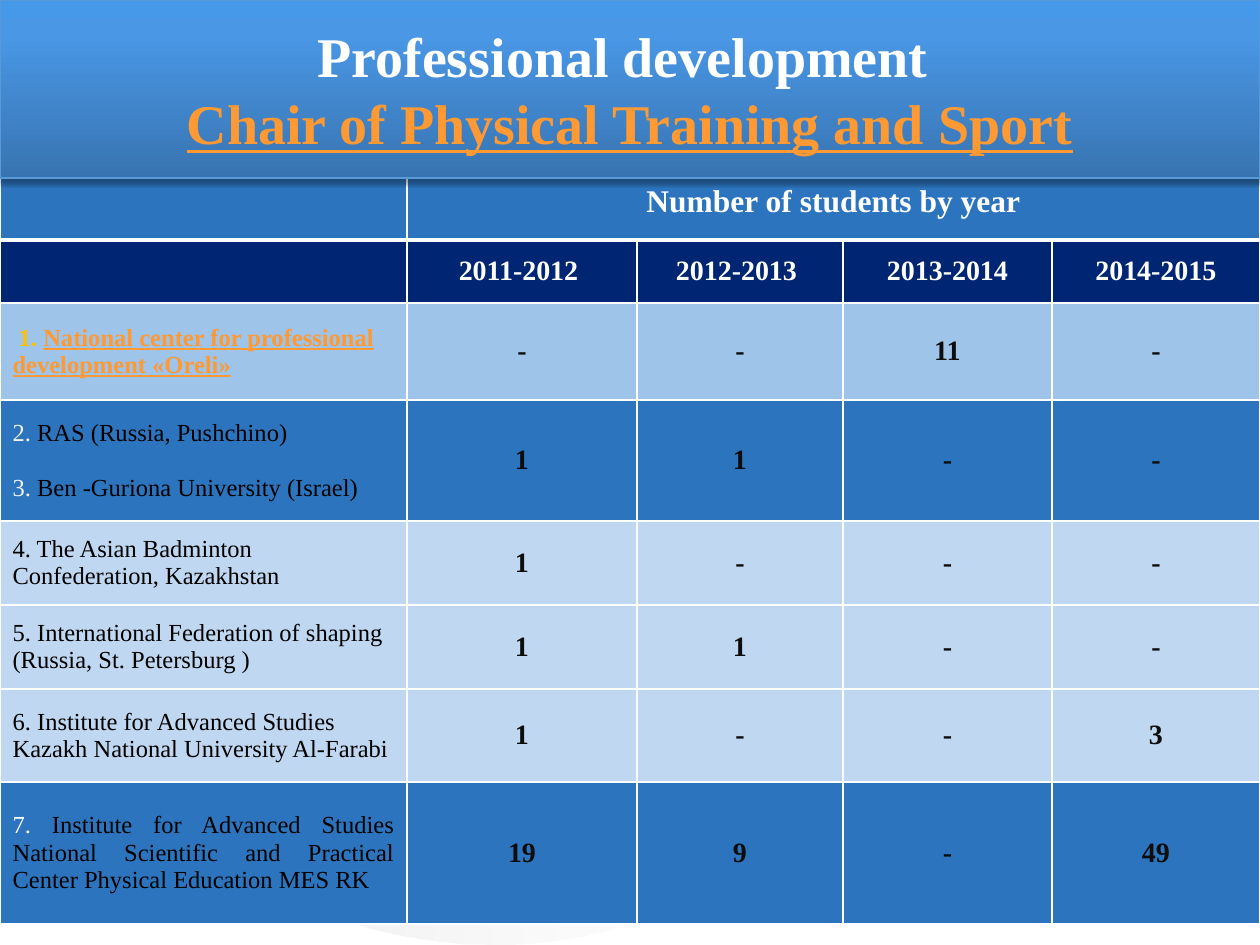
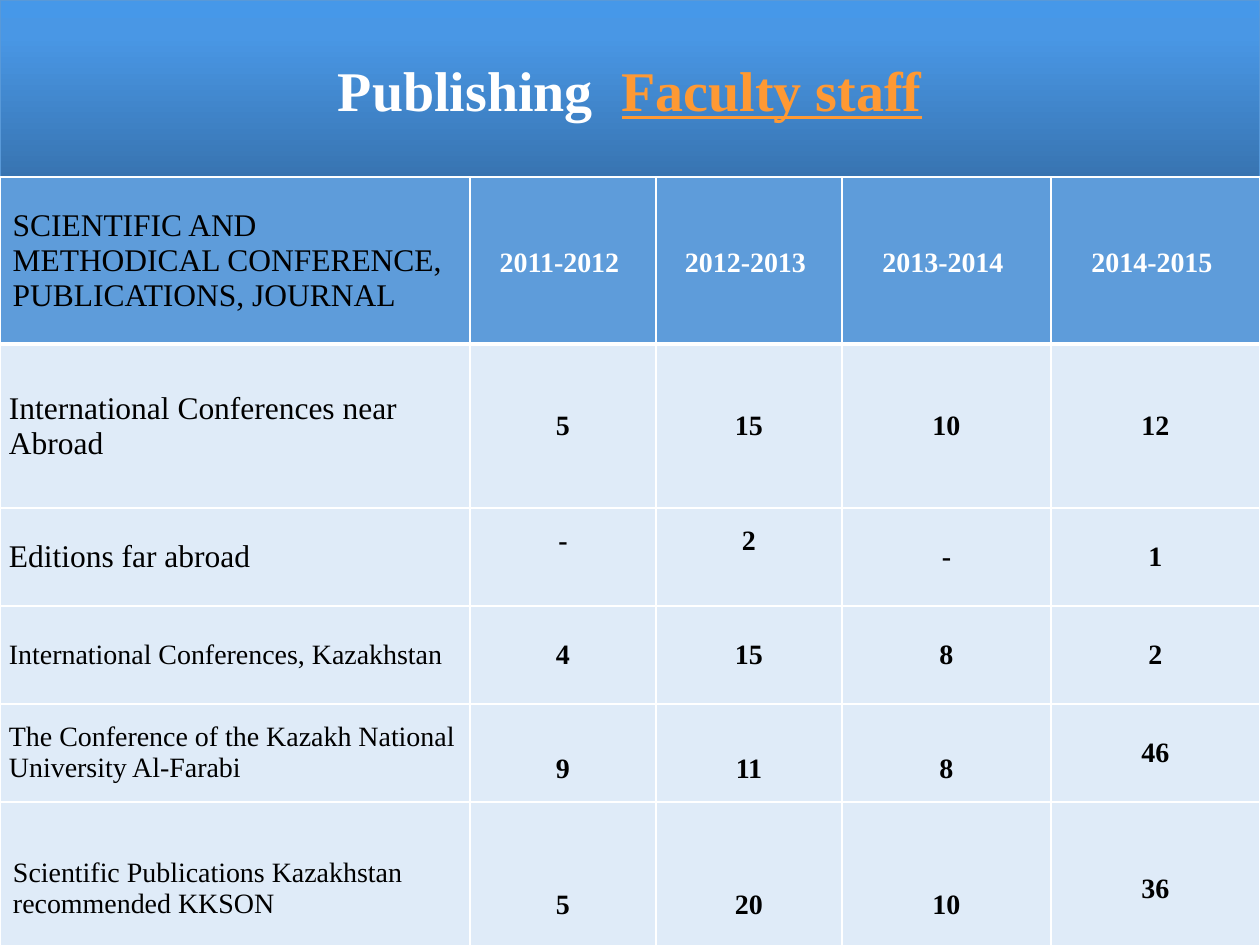
from lxml.etree import SubElement
from pptx import Presentation
from pptx.dml.color import RGBColor
from pptx.enum.shapes import MSO_SHAPE as Shape
from pptx.enum.text import MSO_ANCHOR as Anchor, PP_ALIGN as Align
from pptx.oxml import parse_xml
from pptx.oxml.ns import nsdecls, qn
from pptx.util import Pt

PX = 7257
FONT = "Times New Roman"
WIDTH, HEIGHT, BAND_HEIGHT = 1260, 945, 178
COLORS = {
    "white": "FFFFFF", "black": "000000", "ink": "0D0D0D", "pale": "F2F2F2",
    "orange": "FF9933", "gold": "FFC000", "grey": "C0C0C0",
    "navy": "002673", "blue": "2C75BE", "sky": "9EC4E9", "ice": "BFD7F0",
    "heading": "5E9CDA", "mist": "DFEBF8", "edge": "5999D8",
    "band_low": "3874B1", "band_mid": "4997E5", "band_top": "4698E9",
}

YEARS = ["2011-2012 ", "2012-2013 ", "2013-2014", "2014-2015"]
COURSES = [
    (97, "sky", [[(" 1. ", "gold", True, False),
                  ("National center for professional development «Oreli»", "orange", True, True)]],
     ["-", "-", "11", "-"]),
    (121, "blue", [[("2. ", "pale"), ("RAS (Russia, Pushchino)", "black")],
                   [("3. ", "pale"), ("Ben -Guriona University (Israel)", "black")]],
     ["1", "1", "-", "-"]),
    (84, "ice", [[("4. The Asian Badminton Confederation, Kazakhstan", "black")]],
     ["1", "-", "-", "-"]),
    (84, "ice", [[("5. International Federation of shaping (Russia, St. Petersburg )", "black")]],
     ["1", "1", "-", "-"]),
    (93, "ice", [[("6. Institute for Advanced Studies Kazakh National University Al-Farabi", "black")]],
     ["1", "-", "-", "3"]),
    (142, "blue", [[("7. ", "white"),
                    ("Institute for Advanced Studies National Scientific and Practical "
                     "Center Physical Education MES RK", "black")]],
     ["19", "9", "-", "49"]),
]

PUBLICATIONS = [
    (164, "International Conferences near Abroad", 18, 9, ["5", "15", "10", "12"], [0, 0, 0, 0]),
    (98, "Editions far abroad", 18, 9, ["-", "2", "-", "1"], [-32, -32, 0, 0]),
    (98, "International Conferences, Kazakhstan", 16, 9, ["4", "15", "8", "2"], [0, 0, 0, 0]),
    (98, "The Conference of the Kazakh National University Al-Farabi", 16, 9,
     ["9", "11", "8", "46"], [32, 32, 32, 0]),
    (174, "Scientific Publications Kazakhstan recommended KKSON", 16, 13,
     ["5", "20", "10", "36"], [32, 32, 32, 0]),
]


def px(*lengths):
    return [length * PX for length in lengths]


def rgb(name):
    return RGBColor.from_string(COLORS[name])


def write(frame, paragraphs, size, align=Align.LEFT, gap=0, spacing=None):
    frame.word_wrap = True
    for index, pieces in enumerate(paragraphs):
        paragraph = frame.paragraphs[0] if index == 0 else frame.add_paragraph()
        paragraph.alignment = align
        if spacing:
            paragraph.line_spacing = spacing
        if index and gap:
            paragraph.space_before = Pt(gap)
        for words, color, *style in pieces:
            bold, underline = style or (False, False)
            run = paragraph.add_run()
            run.text = words
            font = run.font
            font.name, font.size = FONT, Pt(size)
            font.bold, font.underline = bold, underline
            font.color.rgb = rgb(color)


def fill_gradient(shape, stops, angle):
    marks = "".join(
        f'<a:gs pos="{place * 1000}"><a:srgbClr val="{COLORS[color]}">'
        f'<a:alpha val="{opacity * 1000}"/></a:srgbClr></a:gs>'
        for place, color, opacity in stops)
    shape._element.spPr.insert(2, parse_xml(
        f'<a:gradFill {nsdecls("a")} rotWithShape="1"><a:gsLst>{marks}</a:gsLst>'
        f'<a:lin ang="{angle * 60000}" scaled="0"/></a:gradFill>'))


def add_glow(slide, left, top, width, height):
    glow = slide.shapes.add_shape(Shape.OVAL, *px(left, top, width, height))
    glow.shadow.inherit = False
    glow.line.fill.background()
    fill_gradient(glow, [(0, "grey", 44), (100, "white", 0)], 0)


def add_title_band(slide, lines):
    band = slide.shapes.add_shape(Shape.RECTANGLE, *px(0, 0, WIDTH, BAND_HEIGHT))
    band.line.color.rgb = rgb("edge")
    band.line.width = Pt(0.75)
    band.shadow.inherit = False
    fill_gradient(band, [(0, "band_low", 100), (80, "band_mid", 100), (100, "band_top", 100)], 270)
    effects = band._element.spPr.find(qn("a:effectLst"))
    effects.append(parse_xml(
        f'<a:outerShdw {nsdecls("a")} blurRad="{Pt(3.1)}" dist="{Pt(1.8)}" dir="5400000" '
        f'rotWithShape="0"><a:srgbClr val="{COLORS["black"]}"><a:alpha val="35000"/>'
        '</a:srgbClr></a:outerShdw>'))
    band.text_frame.vertical_anchor = Anchor.MIDDLE
    write(band.text_frame, lines, 32, Align.CENTER)


def style_cell(cell, color, row):
    cell.fill.solid()
    cell.fill.fore_color.rgb = rgb(color)
    cell.vertical_anchor = Anchor.MIDDLE
    properties = cell._tc.get_or_add_tcPr()
    for position, side in enumerate("LRTB"):
        thick = (side, row) in (("B", 0), ("T", 1))
        border = SubElement(properties, qn(f"a:ln{side}"), w=str(Pt(3 if thick else 1)))
        paint = SubElement(border, qn("a:solidFill"))
        SubElement(paint, qn("a:srgbClr"), val=COLORS["white"])
        properties.insert(position, border)


def add_grid(slide, top, widths, heights, fills):
    frame = slide.shapes.add_table(len(heights), len(widths),
                                   *px(0, top, sum(widths), sum(heights)))
    grid = frame.table
    grid.first_row = grid.horz_banding = False
    for column, width in zip(grid.columns, widths):
        column.width = width * PX
    for index, (row, height, color) in enumerate(zip(grid.rows, heights, fills)):
        row.height = height * PX
        for cell in row.cells:
            style_cell(cell, color, index)
    return grid


def fill_values(grid, row, values, color, shifts=(0, 0, 0, 0), spacing=None):
    for column, (value, shift) in enumerate(zip(values, shifts), 1):
        cell = grid.cell(row, column)
        cell.margin_left = cell.margin_right = 9 * PX
        cell.margin_top, cell.margin_bottom = px(6 + max(shift, 0), 6 + max(-shift, 0))
        write(cell.text_frame, [[(value, color, True, False)]], 16, Align.CENTER, spacing=spacing)


def add_course_table(slide, top):
    heights = [62, 63] + [course[0] for course in COURSES]
    fills = ["blue", "navy"] + [course[1] for course in COURSES]
    grid = add_grid(slide, top, [407, 230, 206, 209, 208], heights, fills)
    heading = grid.cell(0, 1)
    heading.merge(grid.cell(0, 4))
    heading.vertical_anchor = Anchor.TOP
    write(heading.text_frame, [[("Number of students by year", "white", True, False)]],
          18, Align.CENTER)
    fill_values(grid, 1, YEARS, "white")
    for row, (_, _, label, counts) in enumerate(COURSES, 2):
        last = row == len(heights) - 1
        write(grid.cell(row, 0).text_frame, label, 14,
              Align.JUSTIFY if last else Align.LEFT, gap=16)
        fill_values(grid, row, counts, "ink")


def add_publication_table(slide, top):
    heights = [167] + [entry[0] for entry in PUBLICATIONS]
    fills = ["heading"] + ["mist"] * len(PUBLICATIONS)
    grid = add_grid(slide, top, [470, 186, 186, 209, 209], heights, fills)
    write(grid.cell(0, 0).text_frame,
          [[("SCIENTIFIC AND METHODICAL CONFERENCE, PUBLICATIONS, JOURNAL", "black")]], 18)
    fill_values(grid, 0, [year.strip() + " " for year in YEARS], "white", spacing=1.15)
    for row, (_, label, size, inset, counts, shifts) in enumerate(PUBLICATIONS, 1):
        cell = grid.cell(row, 0)
        cell.margin_left = cell.margin_right = inset * PX
        write(cell.text_frame, [[(label, "black")]], size)
        fill_values(grid, row, counts, "black", shifts)


def build_development_slide(slide):
    add_glow(slide, 25, 0, 937, HEIGHT)
    add_course_table(slide, BAND_HEIGHT)
    add_title_band(slide, [
        [("Professional development ", "white", True, False)],
        [("Chair of Physical Training and Sport", "orange", True, True)]])


def build_publishing_slide(slide):
    add_title_band(slide, [[("Publishing  ", "white", True, False),
                            ("Faculty staff", "orange", True, True)]])
    add_publication_table(slide, BAND_HEIGHT - 1)


def main():
    deck = Presentation()
    deck.slide_width, deck.slide_height = px(WIDTH, HEIGHT)
    for build in (build_development_slide, build_publishing_slide):
        build(deck.slides.add_slide(deck.slide_layouts[6]))
    deck.save("out.pptx")


if __name__ == "__main__":
    main()
